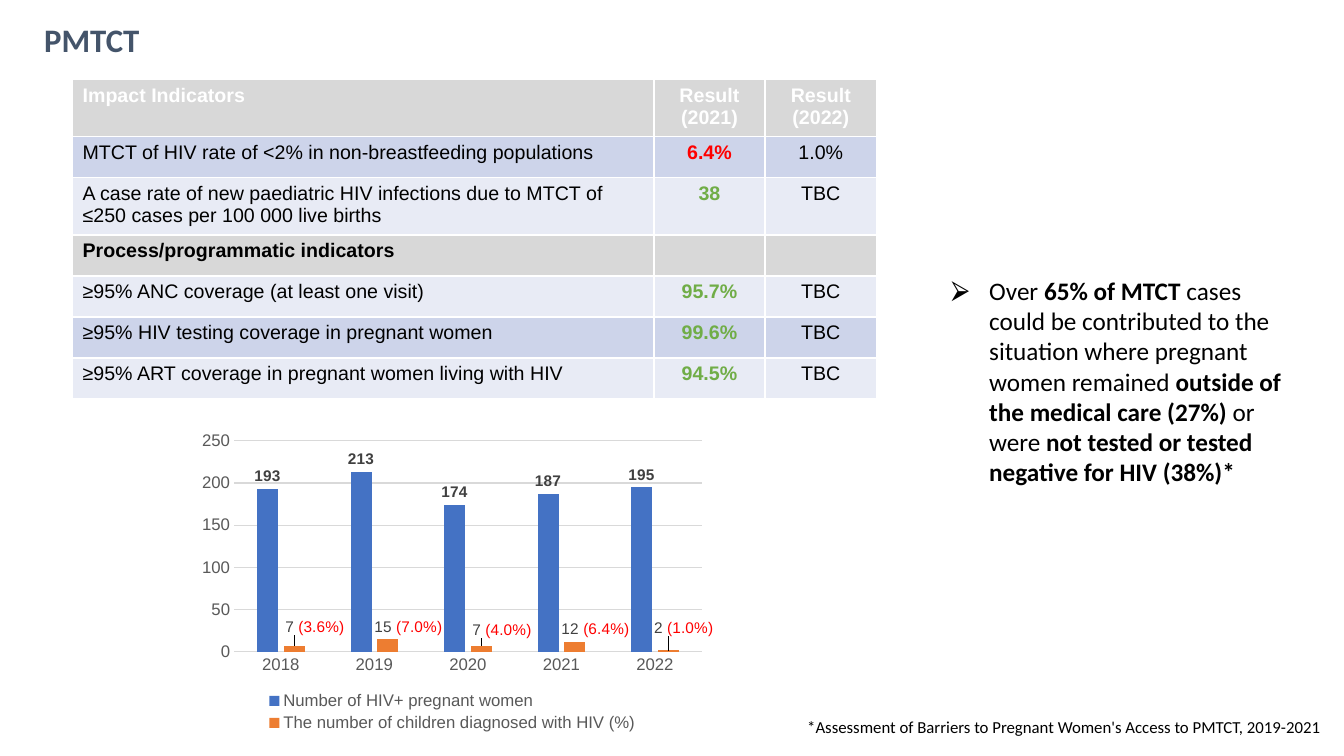
from lxml.etree import SubElement
from pptx import Presentation
from pptx.chart.data import CategoryChartData
from pptx.dml.color import RGBColor
from pptx.enum.chart import XL_CHART_TYPE, XL_LABEL_POSITION, XL_LEGEND_POSITION, XL_TICK_MARK
from pptx.enum.text import MSO_ANCHOR, PP_ALIGN
from pptx.oxml import parse_xml
from pptx.oxml.ns import nsdecls, qn
from pptx.util import Pt

BLACK, WHITE, RED, GREEN = "000000", "FFFFFF", "FF0000", "70AD47"
GREY, BLUE_BAND, PALE_BAND = "D8D8D8", "CDD4EA", "E8EBF5"
AXIS_TEXT, LABEL_TEXT, GRID = "595959", "404040", "D9D9D9"

TITLE = "PMTCT"
HEADER = ("Impact Indicators", "Result (2021)", "Result (2022)")
SECTION = "Process/programmatic indicators"
ROWS = [
    HEADER,
    ("MTCT of HIV rate of <2% in non-breastfeeding populations", "6.4%", "1.0%"),
    ("A case rate of new paediatric HIV infections due to MTCT of ≤250 cases per 100 000 live births", "38", "TBC"),
    (SECTION, "", ""),
    ("≥95% ANC coverage (at least one visit)", "95.7%", "TBC"),
    ("≥95% HIV testing coverage in pregnant women", "99.6%", "TBC"),
    ("≥95% ART coverage in pregnant women living with HIV", "94.5%", "TBC"),
]
MISSED = ("6.4%",)
COL_WIDTHS = (415.4, 79.2, 79.9)
ROW_HEIGHT = 29.3

YEARS = ("2018", "2019", "2020", "2021", "2022")
SERIES = [
    ("Number of HIV+ pregnant women", (193, 213, 174, 187, 195), "4472C4"),
    ("The number of children diagnosed with HIV (%)", (7, 15, 7, 12, 2), "ED7D31"),
]
RATES = ("(3.6%)", "(7.0%)", "(4.0%)", "(6.4%)", "(1.0%)")
LABEL_SHIFTS = ((0.04, -0.02), (0.04, 0), (0.04, -0.01), (0.04, 0), (0.03, -0.03))

FINDING = [
    ("Over ", False),
    ("65% of MTCT ", True),
    ("cases could be contributed to the situation where pregnant women remained ", False),
    ("outside of the medical care (27%) ", True),
    ("or were ", False),
    ("not tested or tested negative for HIV (38%)*", True),
]
FOOTNOTE = "*Assessment of Barriers to Pregnant Women's Access to PMTCT, 2019-2021"


def rgb(value):
    return RGBColor.from_string(value)


def style(font, size, color, name="Arial", bold=False):
    font.size, font.name, font.bold = Pt(size), name, bold
    font.color.rgb = rgb(color)


def add_text(p, text, size=14, color=BLACK, name="Arial", bold=False, align=None):
    r = p.add_run()
    r.text = text
    style(r.font, size, color, name, bold)
    if align is not None:
        p.alignment = align


def add_box(s, left, top, width, height, anchor=MSO_ANCHOR.TOP, margin=3.6):
    tf = s.shapes.add_textbox(Pt(left), Pt(top), Pt(width), Pt(height)).text_frame
    tf.word_wrap = True
    tf.vertical_anchor = anchor
    tf.margin_top = tf.margin_bottom = Pt(margin)
    return tf.paragraphs[0]


def layout_xml(**values):
    items = "".join(f'<c:{k} val="{v}"/>' for k, v in values.items())
    return parse_xml(f'<c:layout {nsdecls("c")}><c:manualLayout>{items}</c:manualLayout></c:layout>')


def add_indicators(s):
    t = s.shapes.add_table(len(ROWS), len(COL_WIDTHS), Pt(51.8), Pt(56.9),
                           Pt(sum(COL_WIDTHS)), Pt(ROW_HEIGHT * len(ROWS))).table
    for col, width in zip(t.columns, COL_WIDTHS):
        col.width = Pt(width)
    for i, row in enumerate(ROWS):
        t.rows[i].height = Pt(ROW_HEIGHT)
        heading = row[0] in (HEADER[0], SECTION)
        for j, text in enumerate(row):
            cell = t.cell(i, j)
            cell.fill.solid()
            cell.fill.fore_color.rgb = rgb(GREY if heading else BLUE_BAND if i % 2 else PALE_BAND)
            color = WHITE if i == 0 else BLACK
            if j == 1 and not heading:
                color = RED if text in MISSED else GREEN
            if text:
                add_text(cell.text_frame.paragraphs[0], text, color=color, bold=heading or j == 1,
                         align=PP_ALIGN.CENTER if j else None)


def add_cases_chart(s):
    data = CategoryChartData()
    data.categories = YEARS
    for name, values, _ in SERIES:
        data.add_series(name, values)
    chart = s.shapes.add_chart(XL_CHART_TYPE.COLUMN_CLUSTERED, Pt(137.5), Pt(303.8),
                               Pt(372.2), Pt(221.8), data).chart
    style(chart.font, 10, BLACK)
    chart.has_title = False
    chart.has_legend = True
    chart.legend.position = XL_LEGEND_POSITION.BOTTOM
    chart.legend.include_in_layout = False
    style(chart.legend.font, 12, AXIS_TEXT)
    for axis in (chart.category_axis, chart.value_axis):
        axis.major_tick_mark = axis.minor_tick_mark = XL_TICK_MARK.NONE
        style(axis.tick_labels.font, 12, AXIS_TEXT)
    val = chart.value_axis
    val.minimum_scale, val.maximum_scale, val.major_unit = 0, 250, 50
    val.format.line.fill.background()
    for line in (chart.category_axis.format.line, val.major_gridlines.format.line):
        line.color.rgb = rgb(GRID)
        line.width = Pt(0.75)

    plot = chart.plots[0]
    plot.gap_width, plot.overlap, plot.vary_by_categories = 219, -27, False
    for series, (_, _, color) in zip(plot.series, SERIES):
        series.format.fill.solid()
        series.format.fill.fore_color.rgb = rgb(color)
        labels = series.data_labels
        labels.show_value = True
        labels.position = XL_LABEL_POSITION.OUTSIDE_END
        style(labels.font, 11, LABEL_TEXT, bold=True)
    children = plot.series[1]
    for i, (count, rate, (x, y)) in enumerate(zip(SERIES[1][1], RATES, LABEL_SHIFTS)):
        label = children.points[i].data_label
        label.position = XL_LABEL_POSITION.OUTSIDE_END
        tf = label.text_frame
        tf.word_wrap = False
        add_text(tf.paragraphs[0], f"{count} ", 11, LABEL_TEXT)
        add_text(tf.paragraphs[0], rate, 11, RED)
    for d, (x, y) in zip(children.data_labels._element.findall(qn("c:dLbl")), LABEL_SHIFTS):
        d.find(qn("c:idx")).addnext(layout_xml(x=x, y=y))

    area = chart._chartSpace.chart.plotArea
    for old in area.findall(qn("c:layout")):
        area.remove(old)
    area.insert(0, layout_xml(layoutTarget="inner", xMode="edge", yMode="edge",
                              x=0.08, y=0.05, w=0.9, h=0.68))


def add_finding(s):
    p = add_box(s, 672.5, 193, 259.2, 182.9)
    pPr = p._p.get_or_add_pPr()
    pPr.set("marL", str(Pt(27)))
    pPr.set("indent", str(Pt(-27)))
    SubElement(pPr, qn("a:buFont")).set("typeface", "Arial")
    SubElement(pPr, qn("a:buChar")).set("char", "⮚")
    for text, bold in FINDING:
        add_text(p, text, 18, name="Calibri", bold=bold)


def main():
    prs = Presentation()
    prs.slide_width, prs.slide_height = Pt(960), Pt(540)
    s = prs.slides.add_slide(prs.slide_layouts[6])
    p = add_box(s, 24.5, 14.4, 825.8, 31, MSO_ANCHOR.MIDDLE)
    p.line_spacing = 0.9
    add_text(p, TITLE, 23.4, "44546A", "Calibri", True)
    add_indicators(s)
    add_cases_chart(s)
    add_finding(s)
    add_text(add_box(s, 569.5, 504.7, 384.5, 28.8, margin=7.2), FOOTNOTE, 12, name="Calibri")
    prs.save("out.pptx")


if __name__ == "__main__":
    main()
